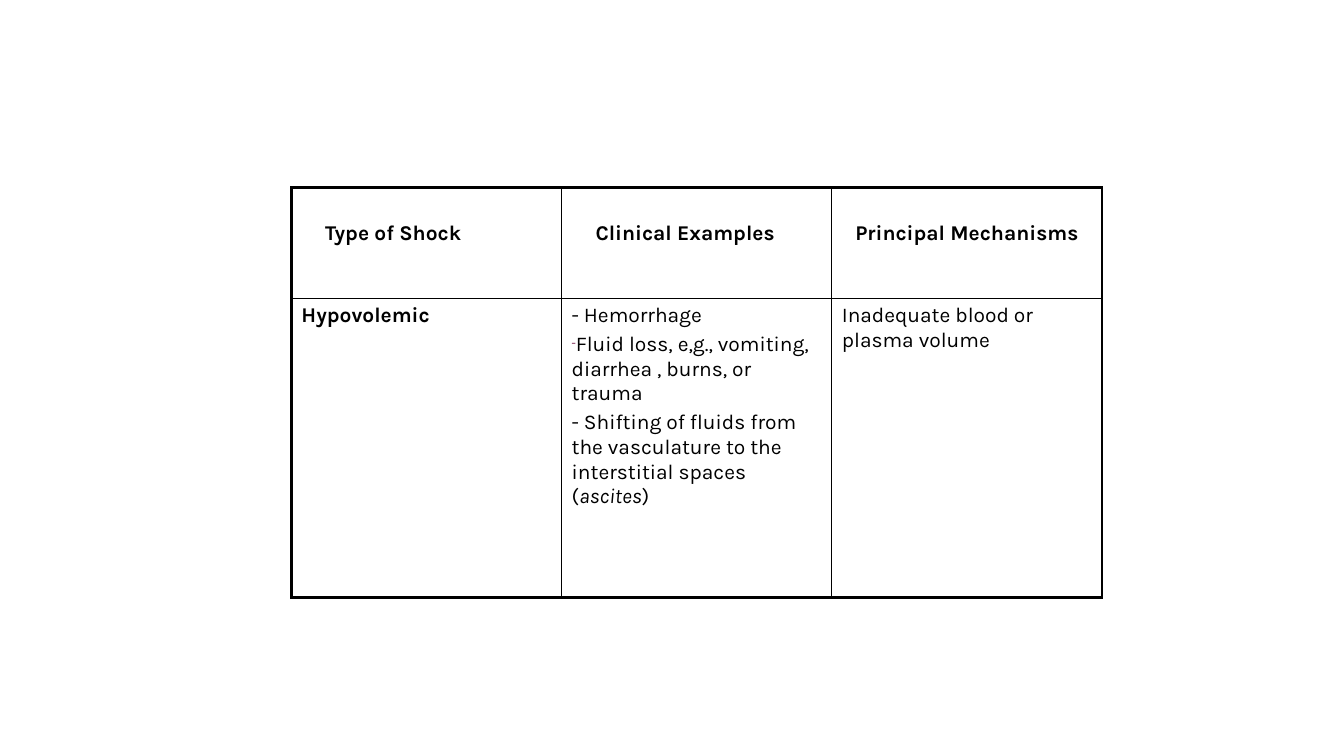
from lxml import etree
from pptx import Presentation
from pptx import util as u
from pptx.dml import color
from pptx.enum import text
from pptx.oxml import ns

COLORS = {"ink": "000000", "bullet": "954F72"}
HEADERS = [("Type of Shock", 0.76), ("Clinical Examples", 0.33), ("Principal Mechanisms", 0.1)]
DETAILS = [
    [[("Hypovolemic", "bold")]],
    [
        [("- Hemorrhage", "")],
        [("Fluid loss, e,g., vomiting, diarrhea , burns, or trauma", "")],
        [
            ("- Shifting of fluids from the vasculature to the interstitial spaces (", ""),
            ("ascites", "italic"),
            (")", ""),
        ],
    ],
    [[("Inadequate blood or plasma volume", "")]],
]
DASHED = "Fluid loss"


class ShockSlide:
    font = "Karla"
    size = 15
    inner_line = 1
    outer_line = 2.25

    def __init__(self, presentation):
        self.slide = presentation.slides.add_slide(presentation.slide_layouts[6])

    def table(self, left, top, column_width, row_heights, columns):
        frame = self.slide.shapes.add_table(
            len(row_heights), columns, u.Inches(left), u.Inches(top),
            u.Inches(column_width * columns), u.Inches(sum(row_heights)))
        table = frame.table
        table.first_row = False
        table.horz_banding = False
        for column in table.columns:
            column.width = u.Inches(column_width)
        for row, height in zip(table.rows, row_heights):
            row.height = u.Inches(height)
        for row in range(len(row_heights)):
            for column in range(columns):
                cell = table.cell(row, column)
                self.borders(cell, {
                    "lnL": column == 0,
                    "lnR": column == columns - 1,
                    "lnT": row == 0,
                    "lnB": row == len(row_heights) - 1,
                })
                cell.fill.background()
        return table

    def borders(self, cell, edges):
        properties = cell._tc.get_or_add_tcPr()
        for tag, outer in edges.items():
            width = u.Pt(self.outer_line if outer else self.inner_line)
            line = etree.SubElement(properties, ns.qn(f"a:{tag}"), w=str(int(width)))
            fill = etree.SubElement(line, ns.qn("a:solidFill"))
            etree.SubElement(fill, ns.qn("a:srgbClr"), val=COLORS["ink"])

    def dash(self, paragraph):
        properties = paragraph._p.get_or_add_pPr()
        tint = etree.SubElement(properties, ns.qn("a:buClr"))
        etree.SubElement(tint, ns.qn("a:srgbClr"), val=COLORS["bullet"])
        etree.SubElement(properties, ns.qn("a:buSzPct"), val="60000")
        etree.SubElement(properties, ns.qn("a:buChar"), char="-")

    def fill_cell(self, cell, paragraphs, align=text.PP_ALIGN.LEFT, top=0.05, right=0.1):
        cell.margin_left, cell.margin_right = u.Inches(0.1), u.Inches(right)
        cell.margin_top, cell.margin_bottom = u.Inches(top), u.Inches(0.05)
        frame = cell.text_frame
        for index, runs in enumerate(paragraphs):
            paragraph = frame.add_paragraph() if index else frame.paragraphs[0]
            paragraph.alignment = align
            if index:
                paragraph.space_before = u.Pt(3)
            if runs[0][0].startswith(DASHED):
                self.dash(paragraph)
            for words, style in runs:
                run = paragraph.add_run()
                run.text = words
                run.font.name = self.font
                run.font.size = u.Pt(self.size)
                run.font.bold = style == "bold"
                run.font.italic = style == "italic"
                run.font.color.rgb = color.RGBColor.from_string(COLORS["ink"])


def main():
    presentation = Presentation()
    presentation.slide_width = u.Inches(13.33)
    presentation.slide_height = u.Inches(7.5)
    page = ShockSlide(presentation)
    table = page.table(2.89, 1.86, 2.68, [1.1, 2.97], len(HEADERS))
    for column, (heading, right) in enumerate(HEADERS):
        page.fill_cell(table.cell(0, column), [[(heading, "bold")]],
                       text.PP_ALIGN.CENTER, top=0.33, right=right)
    for column, paragraphs in enumerate(DETAILS):
        page.fill_cell(table.cell(1, column), paragraphs)
    presentation.save("out.pptx")


if __name__ == "__main__":
    main()
